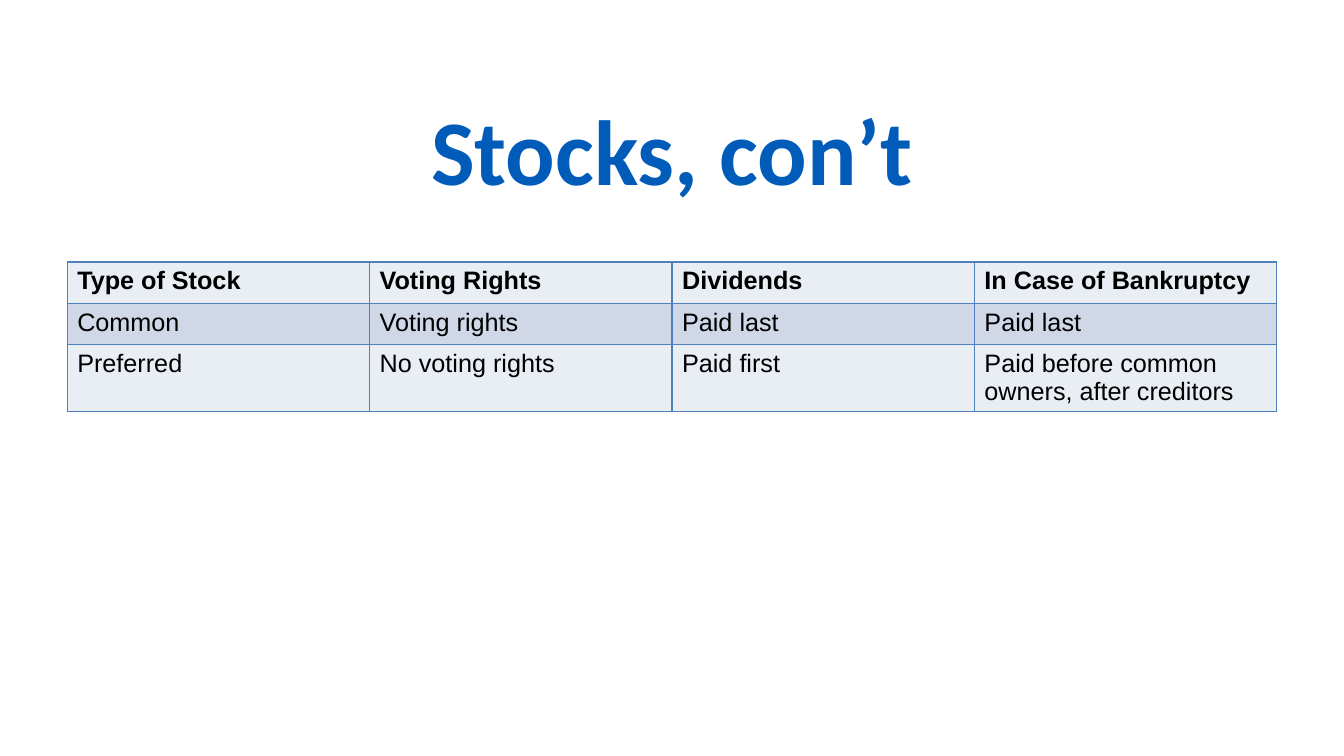
"""Build a slide comparing common and preferred stock in a table."""
import pptx
import pptx.dml.color
import pptx.enum.text
import pptx.oxml
import pptx.oxml.ns
import pptx.util

COLORS = {"title": "005CB8", "text": "000000", "border": "4F81BD",
          "light": "E9EDF4", "dark": "D0D8E8"}
STOCK_ROWS = [
    ["Type of Stock", "Voting Rights", "Dividends", "In Case of Bankruptcy"],
    ["Common", "Voting rights", "Paid last", "Paid last"],
    ["Preferred", "No voting rights", "Paid first",
     "Paid before common owners, after creditors"],
]


def add_span(para, text, font_name, size, color, bold):
    span = para.add_run()
    span.text = text
    span.font.name = font_name
    span.font.size = pptx.util.Pt(size)
    span.font.bold = bold
    span.font.color.rgb = pptx.dml.color.RGBColor.from_string(COLORS[color])


def add_borders(cell):
    properties = cell._tc.get_or_add_tcPr()
    for side in ("lnL", "lnR", "lnT", "lnB"):
        properties.append(pptx.oxml.parse_xml(
            f'<a:{side} {pptx.oxml.ns.nsdecls("a")} w="{pptx.util.Pt(1)}">'
            f'<a:solidFill><a:srgbClr val="{COLORS["border"]}"/></a:solidFill>'
            f'</a:{side}>'))


deck = pptx.Presentation()
deck.slide_width = pptx.util.Inches(13.33)
deck.slide_height = pptx.util.Inches(7.5)
page = deck.slides.add_slide(deck.slide_layouts[5])

margin = int(deck.slide_width * 0.05)
content_width = deck.slide_width - 2 * margin
row_height = pptx.util.Inches(0.41)

title = page.shapes.title
title.left, title.top = margin, pptx.util.Inches(1)
title.width, title.height = content_width, pptx.util.Inches(1.25)
title.text_frame.vertical_anchor = pptx.enum.text.MSO_ANCHOR.MIDDLE
title.text_frame.auto_size = pptx.enum.text.MSO_AUTO_SIZE.NONE
title_para = title.text_frame.paragraphs[0]
title_para.alignment = pptx.enum.text.PP_ALIGN.CENTER
title_para.line_spacing = pptx.util.Pt(57)
add_span(title_para, "Stocks, con’t", "Calibri", 66, "title", True)

stock_table = page.shapes.add_table(
    len(STOCK_ROWS), len(STOCK_ROWS[0]), margin, pptx.util.Inches(2.6),
    content_width, row_height * len(STOCK_ROWS)).table

for row_index, row_texts in enumerate(STOCK_ROWS):
    fill_name = "dark" if row_index % 2 else "light"
    for column_index, text in enumerate(row_texts):
        cell = stock_table.cell(row_index, column_index)
        add_borders(cell)
        cell.fill.solid()
        cell.fill.fore_color.rgb = pptx.dml.color.RGBColor.from_string(
            COLORS[fill_name])
        add_span(cell.text_frame.paragraphs[0], text, "Arial", 18, "text",
                 row_index == 0)

deck.save("out.pptx")
